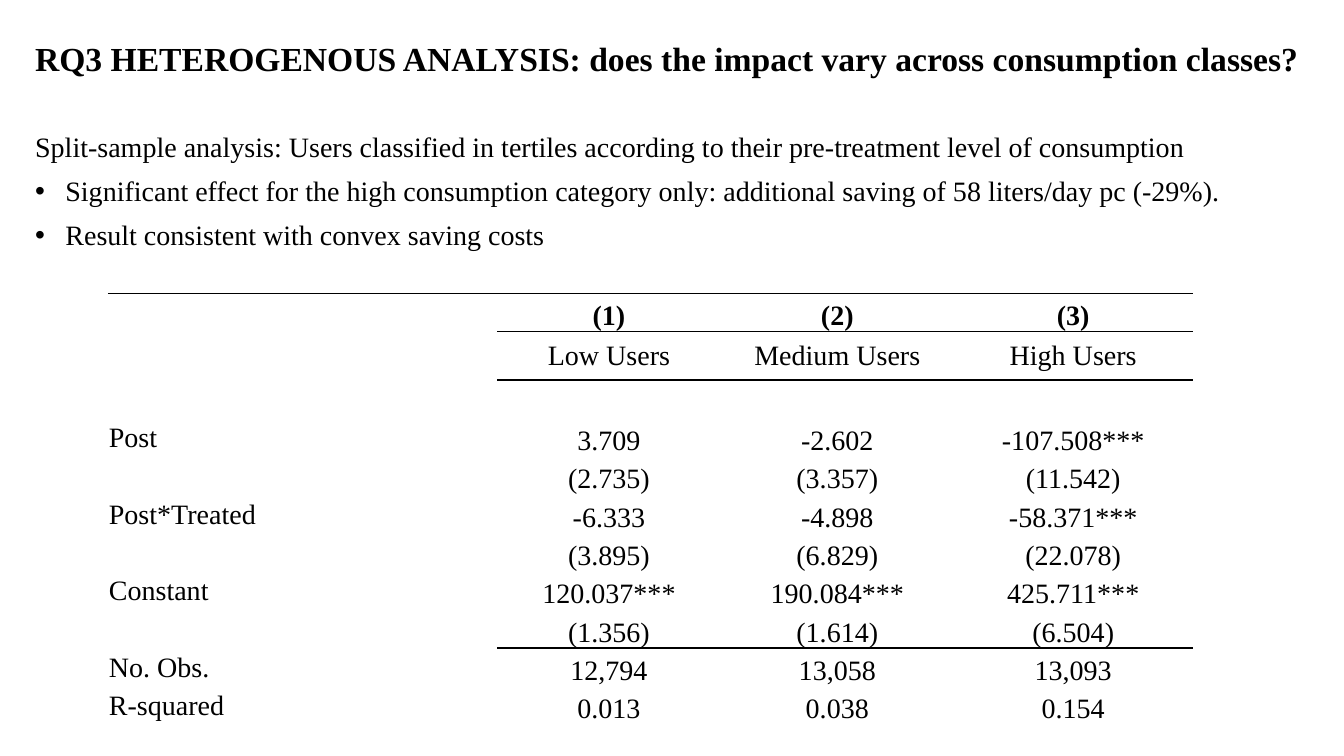
from lxml import etree
from pptx import Presentation
from pptx import util as u
from pptx.dml import color
from pptx.enum import text
from pptx.oxml import ns

PX = 9144  # 100 px to the inch


def px(length):
    return u.Emu(length * PX)


def rgb(code):
    return color.RGBColor.from_string(code)


class SlideBuilder:
    font = "Times New Roman"
    ink, paper = "000000", "FFFFFF"
    size = 20

    def __init__(self, slide):
        self.slide = slide

    def run(self, paragraph, words, size=None, bold=False):
        run = paragraph.add_run()
        run.text = words
        run.font.name = self.font
        run.font.size = u.Pt(size or self.size)
        run.font.bold = bold
        run.font.color.rgb = rgb(self.ink)

    def bullet(self, paragraph, indent):
        props = paragraph._p.get_or_add_pPr()
        props.set("marL", str(indent * PX))
        props.set("indent", str(-indent * PX))
        etree.SubElement(props, ns.qn("a:buFont"), typeface="Arial")
        etree.SubElement(props, ns.qn("a:buChar"), char="•")

    def text_box(self, at, lines, spacing, before=0, size=None, bold=False):
        """Each line is a pair: its words and its bullet indent (0 for none)."""
        frame = self.slide.shapes.add_textbox(*map(px, at)).text_frame
        frame.word_wrap = True
        for number, (words, indent) in enumerate(lines):
            paragraph = frame.add_paragraph() if number else frame.paragraphs[0]
            paragraph.line_spacing = spacing
            paragraph.space_before = u.Pt(before)
            if indent:
                self.bullet(paragraph, indent)
            self.run(paragraph, words, size, bold)

    def borders(self, cell, ruled_sides):
        props = cell._tc.get_or_add_tcPr()
        for side in "LRTB":
            line = etree.SubElement(props, ns.qn("a:ln" + side), w=str(u.Pt(1)))
            if side in ruled_sides:
                fill = etree.SubElement(line, ns.qn("a:solidFill"))
                etree.SubElement(fill, ns.qn("a:srgbClr"), val=self.ink)
            else:
                etree.SubElement(line, ns.qn("a:noFill"))

    def cell(self, cell, words, ruled_sides, align, anchor, bold):
        self.borders(cell, ruled_sides)
        cell.fill.solid()
        cell.fill.fore_color.rgb = rgb(self.paper)
        cell.margin_left = cell.margin_right = cell.margin_top = px(1)
        cell.margin_bottom = 0
        cell.vertical_anchor = anchor
        paragraph = cell.text_frame.paragraphs[0]
        paragraph.alignment = align
        if words:
            self.run(paragraph, words, bold=bold)

    def regression_table(self, left, top, widths, heights, rows, rules):
        """rules: numbers of the rows that have a line above their values."""
        table = self.slide.shapes.add_table(
            len(rows), len(widths), px(left), px(top),
            px(sum(widths)), px(sum(heights))).table
        table.first_row = table.horz_banding = False
        for column, width in zip(table.columns, widths):
            column.width = px(width)
        for row, height in zip(table.rows, heights):
            row.height = px(height)
        for r, row in enumerate(rows):
            for c, words in enumerate(row):
                sides = "T" * (r in rules) + "B" * (r + 1 in rules)
                if c == 0:
                    sides = "T" if r == 0 else ""
                middle = c == 0 or r == 1
                self.cell(
                    table.cell(r, c), words, sides,
                    text.PP_ALIGN.CENTER if c else text.PP_ALIGN.LEFT,
                    text.MSO_ANCHOR.MIDDLE if middle else text.MSO_ANCHOR.BOTTOM,
                    bold=r == 0)


FINDINGS = [
    ("Split-sample analysis: Users classified in tertiles according to their "
     "pre-treatment level of consumption", 0),
    ("Significant effect for the high consumption category only: additional "
     "saving of 58 liters/day pc (-29%).", 30),
    ("Result consistent with convex saving costs", 30),
]

ESTIMATES = [
    ("", "(1)", "(2)", "(3)"),
    ("", "Low Users", "Medium Users", "High Users"),
    ("", "", "", ""),
    ("Post", "3.709", "-2.602", "-107.508***"),
    ("", "(2.735)", "(3.357)", "(11.542)"),
    ("Post*Treated", "-6.333", "-4.898", "-58.371***"),
    ("", "(3.895)", "(6.829)", "(22.078)"),
    ("Constant", "120.037***", "190.084***", "425.711***"),
    ("", "(1.356)", "(1.614)", "(6.504)"),
    ("No. Obs.", "12,794", "13,058", "13,093"),
    ("R-squared", "0.013", "0.038", "0.154"),
]


def main():
    deck = Presentation()
    deck.slide_width, deck.slide_height = px(1333), px(750)
    builder = SlideBuilder(deck.slides.add_slide(deck.slide_layouts[6]))

    # Findings
    builder.text_box((25, 127, 1272, 248), FINDINGS, spacing=0.9, before=10)

    # Estimates by consumption class
    heights = [38, 48] + [38] * 9
    builder.regression_table(107, 291, [386, 222, 231, 237], heights,
                             ESTIMATES, rules={0, 1, 2, 9})

    # Title
    title = ("RQ3 HETEROGENOUS ANALYSIS: does the impact vary across "
             "consumption classes?")
    builder.text_box((25, 13, 1284, 65), [(title, 0)], spacing=1.5,
                     size=24, bold=True)

    deck.save("out.pptx")


if __name__ == "__main__":
    main()
